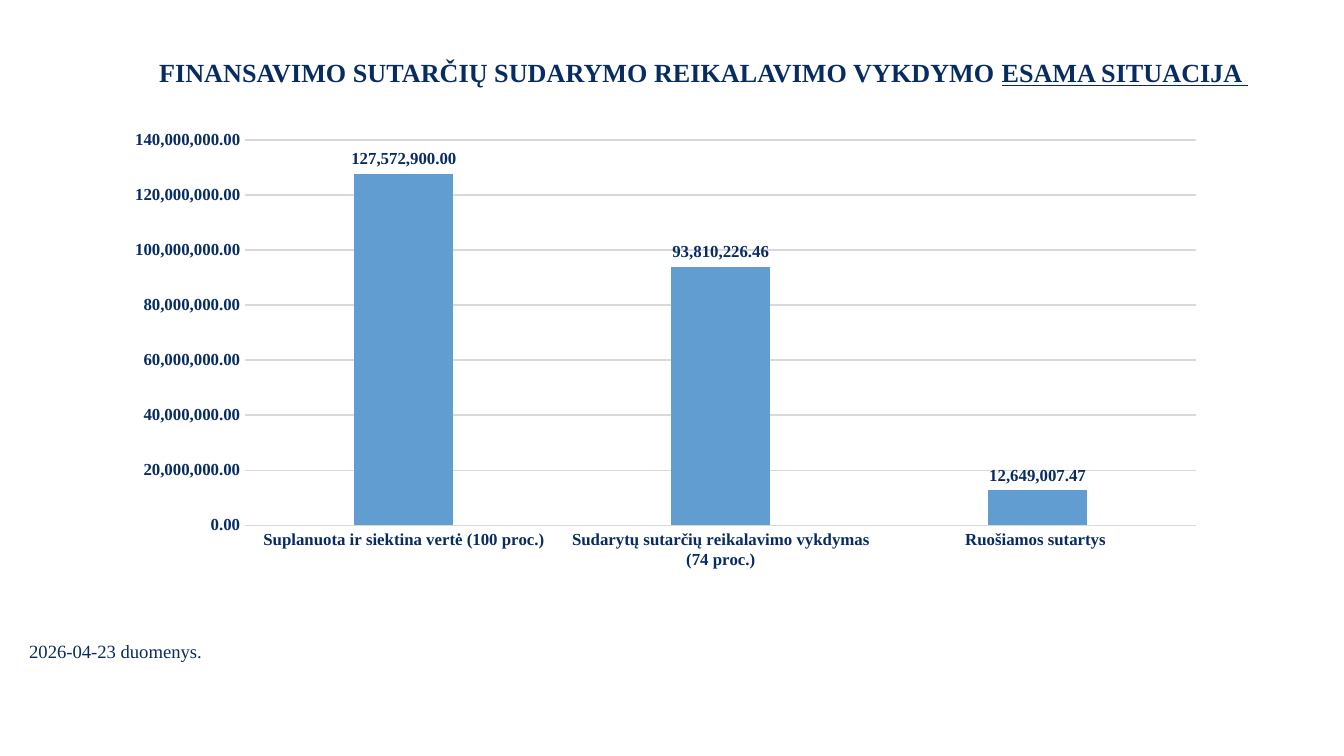
from dataclasses import dataclass

from pptx import Presentation
from pptx.chart.data import CategoryChartData
from pptx.dml.color import RGBColor
from pptx.enum.chart import XL_CHART_TYPE as ChartType
from pptx.enum.chart import XL_LABEL_POSITION as LabelPos
from pptx.enum.chart import XL_TICK_MARK as Tick
from pptx.enum.text import PP_ALIGN as Align
from pptx.util import Emu, Pt

PX = 914400 / 134.4
SERIF = "Times New Roman"
NAVY, BLUE, GREY = "072C62", "629DD1", "D9D9D9"
NUMBER_FORMAT = "#,##0.00"


@dataclass
class Caption:
    x: int
    y: int
    w: int
    h: int
    runs: list[tuple[str, bool]]
    size: int
    bold: bool = False
    align: Align = Align.LEFT


CAPTIONS = [
    Caption(137, 50, 1133, 46,
            [("FINANSAVIMO SUTARČIŲ SUDARYMO REIKALAVIMO VYKDYMO ", False),
             ("ESAMA SITUACIJA ", True)], 14, True, Align.CENTER),
    Caption(16, 633, 978, 36, [("2026-04-23 duomenys.", False)], 10),
]
CONTRACTS = {
    "Suplanuota ir siektina vertė (100 proc.)": 127572900,
    "Sudarytų sutarčių reikalavimo vykdymas (74 proc.)": 93810226.46,
    "Ruošiamos sutartys ": 12649007.47,
}


def px(n: int) -> Emu:
    """Turn pixels into EMU."""
    return Emu(round(n * PX))


def rgb(value: str) -> RGBColor:
    """Turn a hex string into a colour."""
    return RGBColor.from_string(value)


def style_font(font, size: int, bold: bool) -> None:
    """Apply the navy serif style to a font."""
    font.name, font.size, font.bold = SERIF, Pt(size), bold
    font.color.rgb = rgb(NAVY)


def style_line(line) -> None:
    """Make a line thin and grey."""
    line.color.rgb = rgb(GREY)
    line.width = Pt(0.75)


def draw_caption(s, c: Caption) -> None:
    """Draw a text box with one paragraph."""
    tf = s.shapes.add_textbox(px(c.x), px(c.y), px(c.w), px(c.h)).text_frame
    tf.word_wrap = True
    p = tf.paragraphs[0]
    p.alignment = c.align
    for text, underline in c.runs:
        r = p.add_run()
        r.text = text
        style_font(r.font, c.size, c.bold)
        if underline:
            r.font.underline = True


def draw_chart(s, x: int, y: int, w: int, h: int) -> None:
    """Draw the column chart of contract values."""
    data = CategoryChartData(number_format=NUMBER_FORMAT)
    data.categories = list(CONTRACTS)
    data.add_series("Series 1", list(CONTRACTS.values()))
    chart = s.shapes.add_chart(ChartType.COLUMN_CLUSTERED,
                               px(x), px(y), px(w), px(h), data).chart
    chart.has_legend = chart.has_title = False
    style_font(chart.font, 9, True)

    for axis in (chart.category_axis, chart.value_axis):
        axis.major_tick_mark = axis.minor_tick_mark = Tick.NONE
        style_font(axis.tick_labels.font, 9, True)
    style_line(chart.category_axis.format.line)
    values = chart.value_axis
    values.minimum_scale, values.maximum_scale = 0, 140_000_000
    values.major_unit = 20_000_000
    values.format.line.fill.background()
    style_line(values.major_gridlines.format.line)
    values.tick_labels.number_format = NUMBER_FORMAT
    values.tick_labels.number_format_is_linked = False

    plot = chart.plots[0]
    plot.vary_by_categories = False
    plot.gap_width, plot.overlap = 219, -27
    series = plot.series[0]
    series.format.fill.solid()
    series.format.fill.fore_color.rgb = rgb(BLUE)
    labels = series.data_labels
    labels.show_value = True
    labels.position = LabelPos.OUTSIDE_END
    labels.number_format = NUMBER_FORMAT
    labels.number_format_is_linked = False
    style_font(labels.font, 9, True)


def main() -> None:
    """Build and save the slide."""
    prs = Presentation()
    prs.slide_width, prs.slide_height = px(1344), px(756)
    s = prs.slides.add_slide(prs.slide_layouts[6])
    for caption in CAPTIONS:
        draw_caption(s, caption)
    draw_chart(s, 113, 121, 1105, 458)
    prs.save("out.pptx")


if __name__ == "__main__":
    main()
